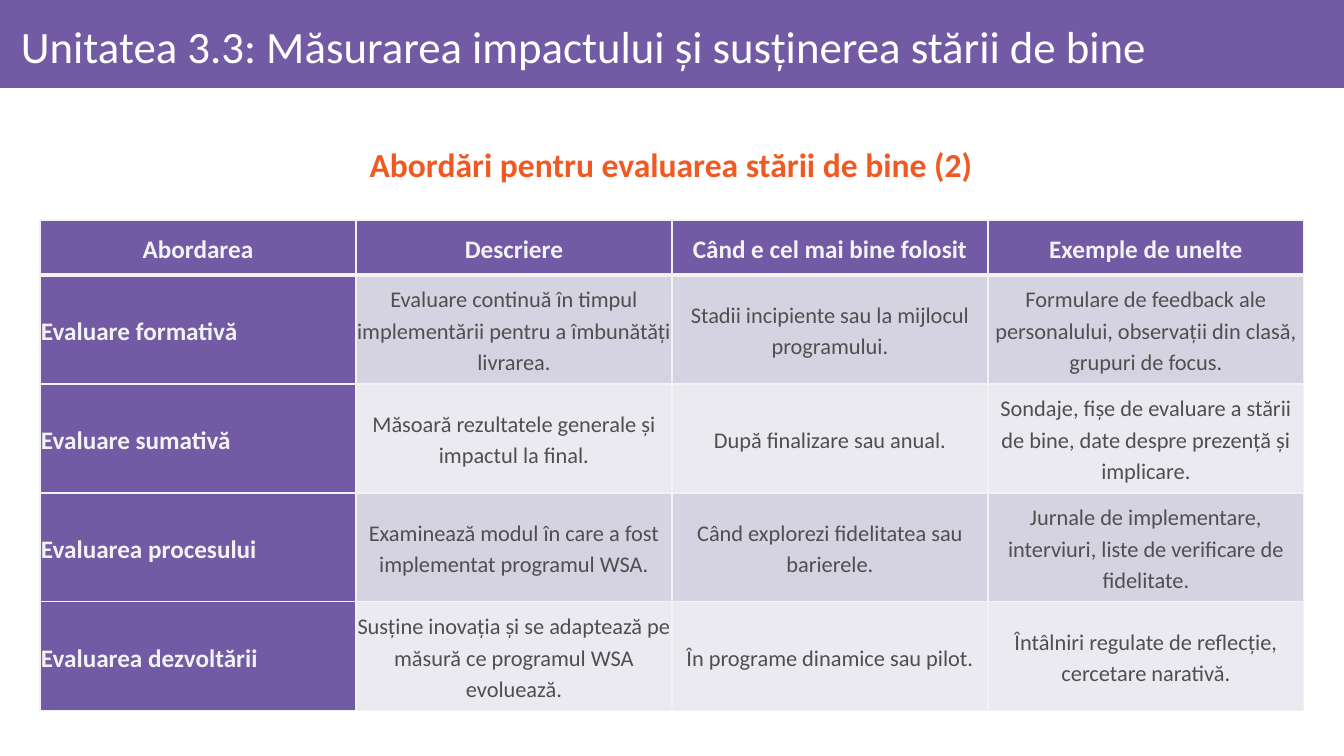
from dataclasses import dataclass

import pptx
import pptx.dml.color
import pptx.enum.shapes
import pptx.enum.text
import pptx.oxml
import pptx.oxml.ns
import pptx.presentation
import pptx.slide
import pptx.table
import pptx.text.text
import pptx.util

SLIDE_WIDTH, SLIDE_HEIGHT = 1344, 756
EMU_PER_PX = 12192000 / SLIDE_WIDTH

ALIGN = pptx.enum.text.PP_ALIGN
MIDDLE = pptx.enum.text.MSO_ANCHOR.MIDDLE


@dataclass(frozen=True)
class Theme:
    font: str = "Calibri"
    purple: str = "735AA5"
    orange: str = "F05A22"
    white: str = "FFFFFF"
    pale: str = "F2F2F2"
    ink: str = "4F4F50"
    bands: tuple[str, str] = ("D5D2E1", "EBEAF0")
    title_size: int = 32
    subtitle_size: int = 24
    heading_size: int = 18
    body_size: int = 16


THEME = Theme()


@dataclass(frozen=True)
class Box:
    left: int
    top: int
    width: int
    height: int

    def emu(self) -> tuple[int, int, int, int]:
        return px(self.left), px(self.top), px(self.width), px(self.height)


@dataclass(frozen=True)
class TextStyle:
    size: int
    color: str
    bold: bool = False
    align: ALIGN = ALIGN.CENTER
    line_spacing: float = 0.9
    space_after: int = 0


@dataclass(frozen=True)
class Heading:
    text: str
    box: Box
    style: TextStyle


HEADER_BAND = Box(0, 0, SLIDE_WIDTH, 88)
HEADINGS = (
    Heading("Unitatea 3.3: Măsurarea impactului și susținerea stării de bine",
            Box(11, 9, 1316, 79),
            TextStyle(THEME.title_size, THEME.white, align=ALIGN.LEFT)),
    Heading("Abordări pentru evaluarea stării de bine (2)",
            Box(11, 137, 1316, 60),
            TextStyle(THEME.subtitle_size, THEME.orange, bold=True)),
)

COLUMN_HEAD = TextStyle(THEME.heading_size, THEME.pale, True, ALIGN.CENTER, 1.15, 8)
ROW_HEAD = TextStyle(THEME.heading_size, THEME.pale, True, ALIGN.LEFT, 1.15, 8)
CELL_BODY = TextStyle(THEME.body_size, THEME.ink, False, ALIGN.CENTER, 1.15, 8)

TABLE_LEFT, TABLE_TOP, COLUMN_WIDTH = 40, 220, 316
HEAD_HEIGHT, ROW_HEIGHT = 55, 109
THIN, THICK = 1, 3
APPROACHES = (
    ("Abordarea", "Descriere", "Când e cel mai bine folosit", "Exemple de unelte"),
    ("Evaluare formativă",
     "Evaluare continuă în timpul implementării pentru a îmbunătăți livrarea.",
     "Stadii incipiente sau la mijlocul programului.",
     "Formulare de feedback ale personalului, observații din clasă, grupuri de focus."),
    ("Evaluare sumativă",
     "Măsoară rezultatele generale și impactul la final.",
     "După finalizare sau anual.",
     "Sondaje, fișe de evaluare a stării de bine, date despre prezență și implicare."),
    ("Evaluarea procesului",
     "Examinează modul în care a fost implementat programul WSA.",
     "Când explorezi fidelitatea sau barierele.",
     "Jurnale de implementare, interviuri, liste de verificare de fidelitate."),
    ("Evaluarea dezvoltării",
     "Susține inovația și se adaptează pe măsură ce programul WSA evoluează.",
     "În programe dinamice sau pilot.",
     "Întâlniri regulate de reflecție, cercetare narativă."),
)


def px(length: int) -> int:
    return round(length * EMU_PER_PX)


def rgb(color: str) -> pptx.dml.color.RGBColor:
    return pptx.dml.color.RGBColor.from_string(color)


def write(frame: pptx.text.text.TextFrame, text: str, style: TextStyle) -> None:
    frame.text = text
    para = frame.paragraphs[0]
    para.alignment = style.align
    para.line_spacing = style.line_spacing
    para.space_after = pptx.util.Pt(style.space_after)
    font = para.runs[0].font
    font.name = THEME.font
    font.size = pptx.util.Pt(style.size)
    font.bold = style.bold
    font.color.rgb = rgb(style.color)


def draw_header_band(page: pptx.slide.Slide) -> None:
    band = page.shapes.add_shape(
        pptx.enum.shapes.MSO_SHAPE.RECTANGLE, *HEADER_BAND.emu())
    band.shadow.inherit = False
    band.fill.solid()
    band.fill.fore_color.rgb = rgb(THEME.purple)
    band.line.fill.background()


def draw_heading(page: pptx.slide.Slide, heading: Heading) -> None:
    frame = page.shapes.add_textbox(*heading.box.emu()).text_frame
    frame.word_wrap = True
    frame.vertical_anchor = MIDDLE
    frame.margin_left = px(10)
    frame.margin_right = px(6)
    frame.margin_top = frame.margin_bottom = px(6)
    write(frame, heading.text, heading.style)


def set_borders(cell: pptx.table._Cell, top: int, bottom: int) -> None:
    """Add the four cell borders; call before filling, as the schema orders them first."""
    properties = cell._tc.get_or_add_tcPr()
    widths = {"lnL": THIN, "lnR": THIN, "lnT": top, "lnB": bottom}
    for tag, width in widths.items():
        properties.append(pptx.oxml.parse_xml(
            f'<a:{tag} {pptx.oxml.ns.nsdecls("a")} w="{pptx.util.Pt(width)}">'
            f'<a:solidFill><a:srgbClr val="{THEME.pale}"/></a:solidFill></a:{tag}>'))


def cell_look(row: int, column: int) -> tuple[TextStyle, str]:
    """Return the text style and fill colour for a table position."""
    if row == 0:
        return COLUMN_HEAD, THEME.purple
    if column == 0:
        return ROW_HEAD, THEME.purple
    return CELL_BODY, THEME.bands[(row - 1) % 2]


def draw_table(page: pptx.slide.Slide) -> None:
    row_count, column_count = len(APPROACHES), len(APPROACHES[0])
    area = Box(TABLE_LEFT, TABLE_TOP, column_count * COLUMN_WIDTH,
               HEAD_HEIGHT + (row_count - 1) * ROW_HEIGHT)
    table = page.shapes.add_table(row_count, column_count, *area.emu()).table
    table.horz_banding = False
    for column in table.columns:
        column.width = px(COLUMN_WIDTH)
    for row_index, texts in enumerate(APPROACHES):
        table.rows[row_index].height = px(ROW_HEIGHT if row_index else HEAD_HEIGHT)
        for column_index, text in enumerate(texts):
            cell = table.cell(row_index, column_index)
            style, fill = cell_look(row_index, column_index)
            set_borders(cell, top=THICK if row_index == 1 else THIN,
                        bottom=THICK if row_index == 0 else THIN)
            cell.fill.solid()
            cell.fill.fore_color.rgb = rgb(fill)
            cell.vertical_anchor = MIDDLE
            cell.margin_left = cell.margin_right = px(1)
            cell.margin_top = cell.margin_bottom = px(1)
            write(cell.text_frame, text, style)


def main() -> None:
    deck = pptx.Presentation()
    deck.slide_width, deck.slide_height = px(SLIDE_WIDTH), px(SLIDE_HEIGHT)
    page = deck.slides.add_slide(deck.slide_layouts[6])
    draw_header_band(page)
    for heading in HEADINGS:
        draw_heading(page, heading)
    draw_table(page)
    deck.save("out.pptx")


if __name__ == "__main__":
    main()
